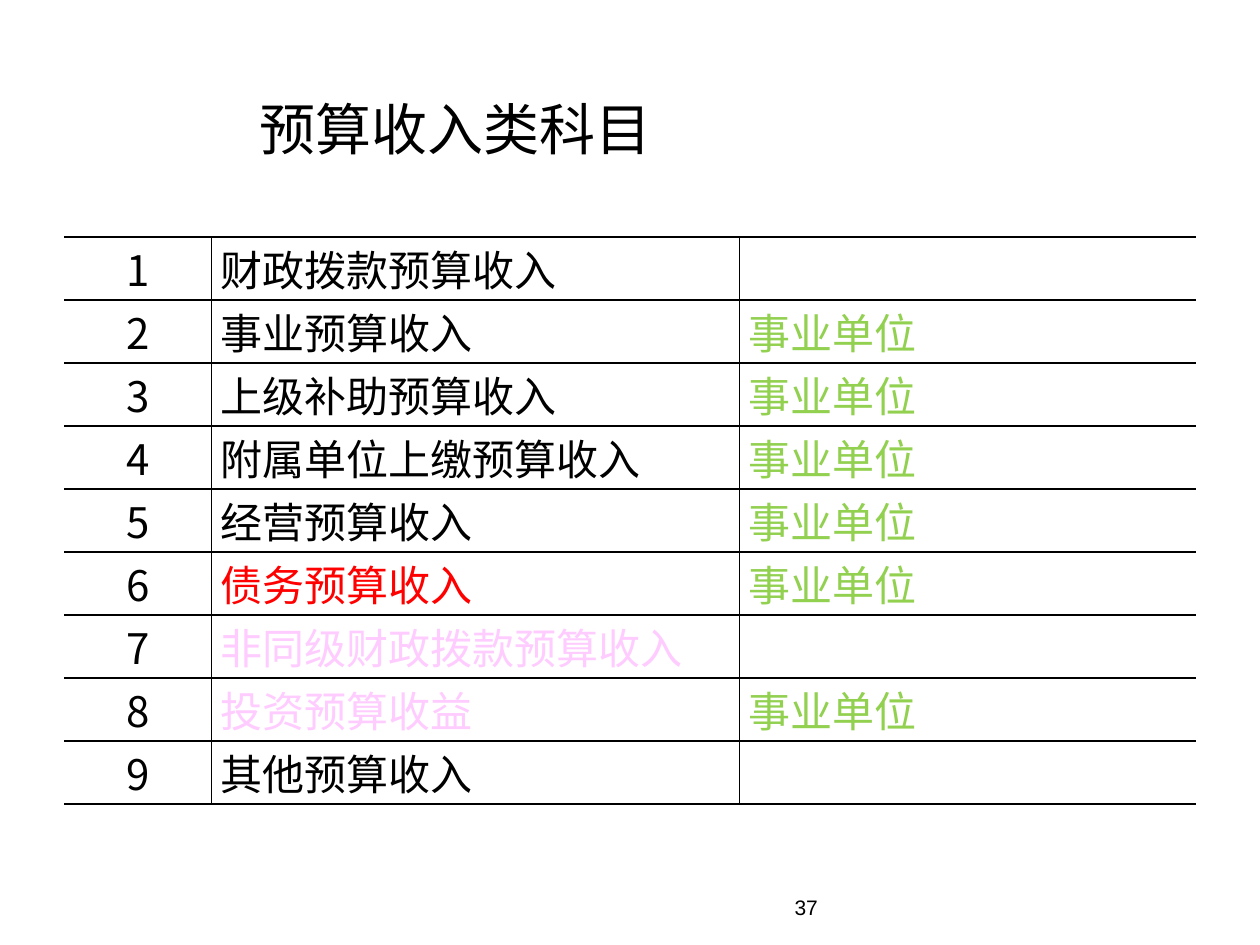
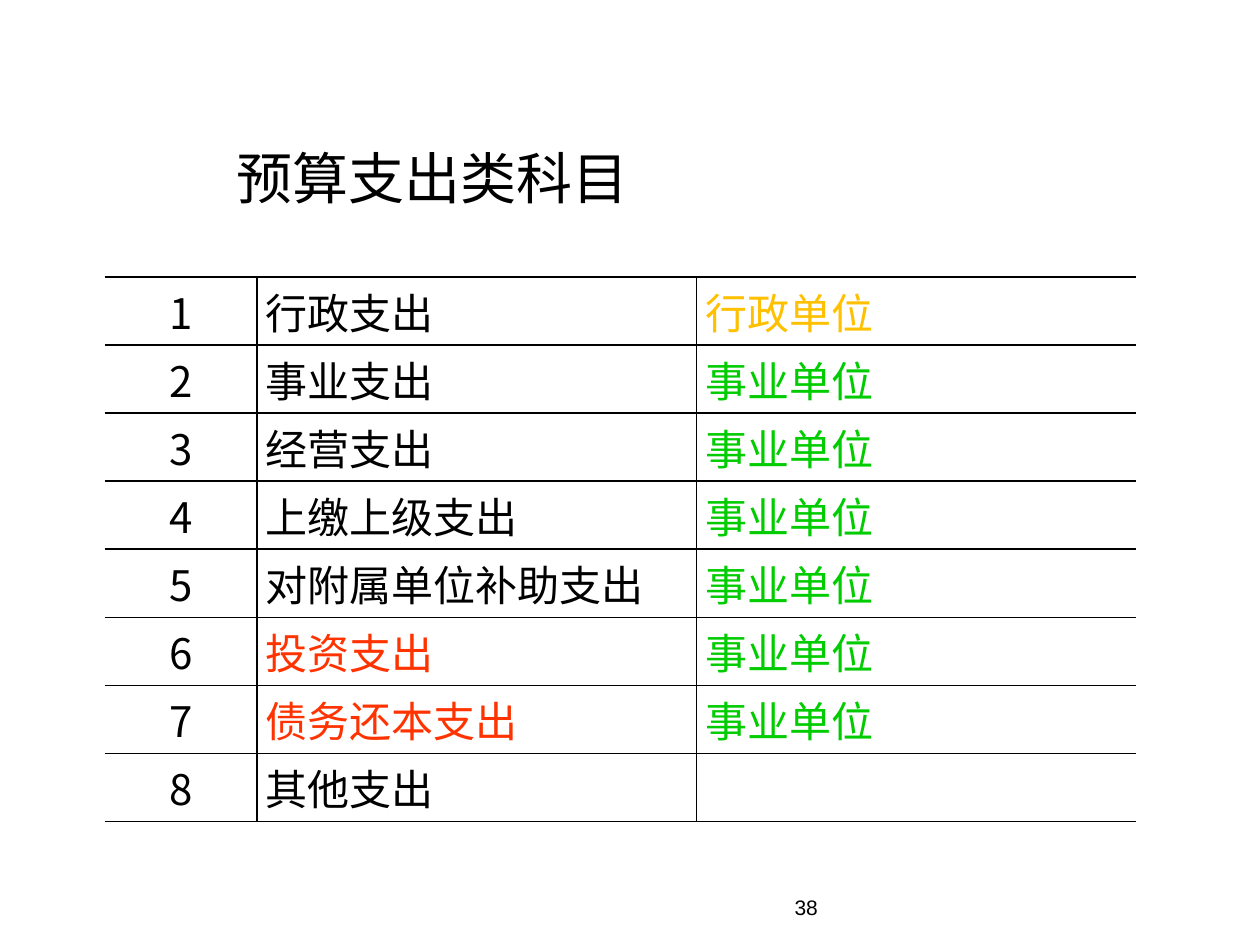
import dataclasses

import lxml.etree
import pptx
import pptx.dml.color
import pptx.enum.text
import pptx.oxml.ns
import pptx.util

Inches = pptx.util.Inches
Align = pptx.enum.text.PP_ALIGN
Anchor = pptx.enum.text.MSO_ANCHOR


@dataclasses.dataclass(frozen=True)
class Theme:
    font: str = "Noto Sans CJK SC"
    number_font: str = "Arial"
    title_size: int = 32
    body_size: int = 24
    number_size: int = 12
    black: str = "000000"
    white: str = "FFFFFF"
    red: str = "FF0000"
    orange_red: str = "FF3300"
    pink: str = "FFCCFF"
    light_green: str = "92D050"
    green: str = "00CC00"
    amber: str = "FFC000"
    border_width: int = 1
    cell_margin: float = 0.07


THEME = Theme()
PUBLIC_UNIT = "事业单位"
COLUMN_BORDERS = ("RTB", "LRTB", "LTB")


def add_run(paragraph, text, size, color=THEME.black, font=THEME.font):
    run = paragraph.add_run()
    run.text = text
    run.font.size = pptx.util.Pt(size)
    run.font.name = font
    run.font.color.rgb = pptx.dml.color.RGBColor.from_string(color)
    east_asian = lxml.etree.SubElement(
        run.font._element, pptx.oxml.ns.qn("a:ea"))
    east_asian.set("typeface", font)


def set_borders(cell, sides):
    properties = cell._tc.get_or_add_tcPr()
    qn = pptx.oxml.ns.qn
    for side in "LRTB":
        line = lxml.etree.SubElement(properties, qn(f"a:ln{side}"))
        line.set("w", str(pptx.util.Pt(THEME.border_width)))
        if side in sides:
            fill = lxml.etree.SubElement(line, qn("a:solidFill"))
            color = lxml.etree.SubElement(fill, qn("a:srgbClr"))
            color.set("val", THEME.black)
        else:
            lxml.etree.SubElement(line, qn("a:noFill"))


def style_cell(cell, sides, anchor=Anchor.MIDDLE):
    set_borders(cell, sides)
    cell.fill.background()
    cell.vertical_anchor = anchor
    cell.margin_left = cell.margin_right = Inches(THEME.cell_margin)
    cell.margin_top = cell.margin_bottom = 0


def add_title_row(table, title, indent):
    for column in range(3):
        style_cell(table.cell(0, column), "B", Anchor.TOP)
    title_cell = table.cell(0, 0)
    title_cell.merge(table.cell(0, 1))
    title_cell.margin_left = Inches(indent)
    add_run(title_cell.text_frame.paragraphs[0], title, THEME.title_size)


def add_subject_table(slide, title, indent, position, widths, title_height,
                      row_height, subjects):
    heights = [title_height] + [row_height] * len(subjects)
    table = slide.shapes.add_table(
        len(heights), len(widths), *map(Inches, position),
        Inches(sum(widths)), Inches(sum(heights))).table
    table.first_row = table.horz_banding = False
    for column, width in zip(table.columns, widths):
        column.width = Inches(width)
    for row, height in zip(table.rows, heights):
        row.height = Inches(height)

    add_title_row(table, title, indent)
    for number, (name, name_color, unit, unit_color) in enumerate(subjects, 1):
        entries = ((str(number), THEME.black), (name, name_color),
                   (unit, unit_color))
        for column, (text, color) in enumerate(entries):
            cell = table.cell(number, column)
            style_cell(cell, COLUMN_BORDERS[column])
            paragraph = cell.text_frame.paragraphs[0]
            if column == 0:
                paragraph.alignment = Align.CENTER
            if text:
                add_run(paragraph, text, THEME.body_size, color)


def add_page_number(slide, number):
    box = slide.shapes.add_textbox(
        Inches(3.42), Inches(6.83), Inches(3.17), Inches(0.52))
    frame = box.text_frame
    frame.word_wrap = True
    frame.vertical_anchor = Anchor.BOTTOM
    paragraph = frame.paragraphs[0]
    paragraph.alignment = Align.RIGHT
    add_run(paragraph, str(number), THEME.number_size, font=THEME.number_font)


def add_slide(presentation, page_number, **table_options):
    slide = presentation.slides.add_slide(presentation.slide_layouts[6])
    slide.background.fill.solid()
    slide.background.fill.fore_color.rgb = (
        pptx.dml.color.RGBColor.from_string(THEME.white))
    add_subject_table(slide, **table_options)
    add_page_number(slide, page_number)


def main():
    presentation = pptx.Presentation()
    presentation.slide_width = Inches(10)
    presentation.slide_height = Inches(7.5)

    public_income = (PUBLIC_UNIT, THEME.light_green)
    public_expense = (PUBLIC_UNIT, THEME.green)
    any_unit = ("", THEME.black)

    add_slide(
        presentation, 37, title="预算收入类科目", indent=1.55,
        position=(0.51, 0.68), widths=(1.17, 4.19, 3.62),
        title_height=1.2, row_height=0.5,
        subjects=[
            ("财政拨款预算收入", THEME.black, *any_unit),
            ("事业预算收入", THEME.black, *public_income),
            ("上级补助预算收入", THEME.black, *public_income),
            ("附属单位上缴预算收入", THEME.black, *public_income),
            ("经营预算收入", THEME.black, *public_income),
            ("债务预算收入", THEME.red, *public_income),
            ("非同级财政拨款预算收入", THEME.pink, *any_unit),
            ("投资预算收益", THEME.pink, *public_income),
            ("其他预算收入", THEME.black, *any_unit),
        ])
    add_slide(
        presentation, 38, title="预算支出类科目", indent=1.05,
        position=(0.83, 1.07), widths=(1.21, 3.49, 3.49),
        title_height=1.13, row_height=0.54,
        subjects=[
            ("行政支出", THEME.black, "行政单位", THEME.amber),
            ("事业支出", THEME.black, *public_expense),
            ("经营支出", THEME.black, *public_expense),
            ("上缴上级支出", THEME.black, *public_expense),
            ("对附属单位补助支出", THEME.black, *public_expense),
            ("投资支出", THEME.orange_red, *public_expense),
            ("债务还本支出", THEME.orange_red, *public_expense),
            ("其他支出", THEME.black, *any_unit),
        ])
    presentation.save("out.pptx")


if __name__ == "__main__":
    main()
